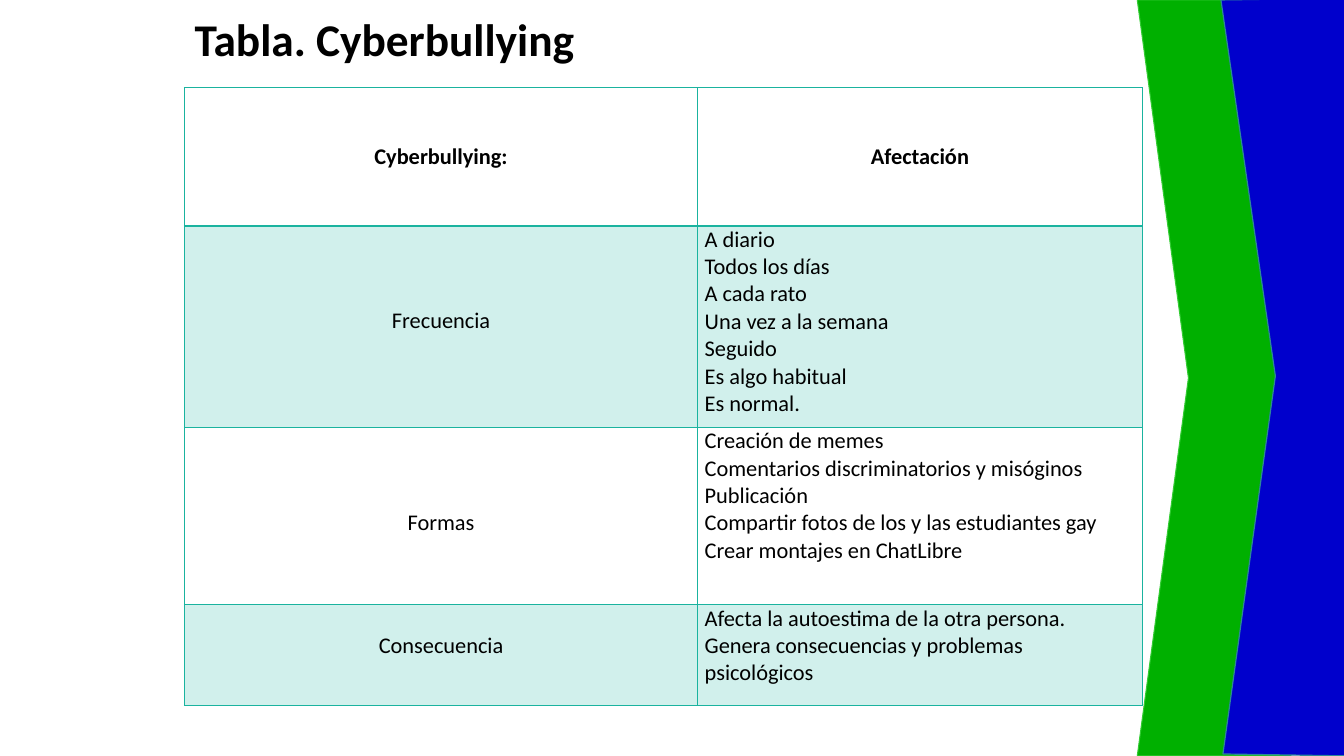
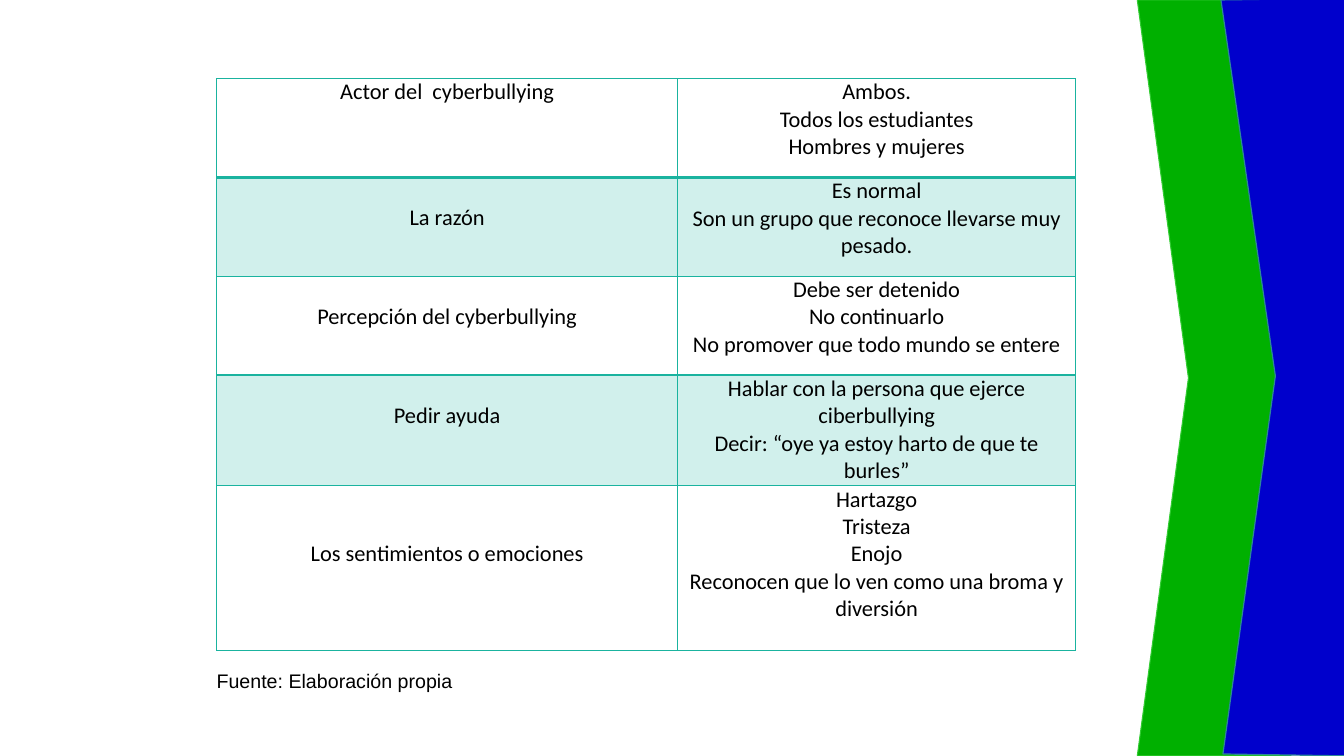
from dataclasses import dataclass

from lxml.etree import SubElement
from pptx import Presentation
from pptx.dml.color import RGBColor
from pptx.enum.shapes import MSO_SHAPE
from pptx.enum.text import MSO_ANCHOR, PP_ALIGN
from pptx.oxml.ns import qn
from pptx.util import Inches, Pt

BLACK = RGBColor(0x00, 0x00, 0x00)
GREEN = RGBColor(0x00, 0xB0, 0x00)
GREEN_EDGE = RGBColor(0x33, 0xCC, 0x33)
BLUE = RGBColor(0x00, 0x00, 0xCC)
BLUE_EDGE = RGBColor(0x2E, 0x87, 0x99)
TEAL = RGBColor(0x1A, 0xB3, 0x9F)
PALE_TEAL = RGBColor(0xD1, 0xF0, 0xEC)

TABLE_SIZE = 16
LINE_HEIGHT = 0.27  # one line of table text, in inches
BLUE_BAND = [(12.11, 0), (13.47, -0.02), (13.4, 3.75),
             (13.44, 7.5), (12.13, 7.48), (12.65, 3.73)]


@dataclass(frozen=True)
class Row:
    height: float
    label: str
    answers: list[str]
    label_drop: int = 0  # lines of space above the label
    header: bool = False


@dataclass(frozen=True)
class TableSpec:
    left: float
    top: float
    widths: tuple[float, float]
    rows: list[Row]
    answer_align: PP_ALIGN


AFFECTATION = TableSpec(1.83, 0.87, (5.09, 4.41), [
    Row(1.37, "Cyberbullying:", ["Afectación"], header=True),
    Row(2, "Frecuencia", [
        "A diario", "Todos los días", "A cada rato", "Una vez a la semana",
        "Seguido", "Es algo habitual", "Es normal."], 3),
    Row(1.76, "Formas", [
        "Creación de memes", "Comentarios discriminatorios y misóginos",
        "Publicación", "Compartir fotos de los y las estudiantes gay",
        "Crear montajes en ChatLibre"], 3),
    Row(1, "Consecuencia", [
        "Afecta la autoestima de la otra persona.",
        "Genera consecuencias y problemas psicológicos"], 1),
], PP_ALIGN.LEFT)

PERCEPTION = TableSpec(2.15, 0.78, (4.57, 3.95), [
    Row(0.98, "Actor del  cyberbullying", [
        "Ambos.", "Todos los estudiantes", "Hombres y mujeres"]),
    Row(0.98, "La razón", [
        "Es normal", "Son un grupo que reconoce llevarse muy pesado."], 1),
    Row(0.98, "Percepción del cyberbullying", [
        "Debe ser detenido", "No continuarlo",
        "No promover que todo mundo se entere"], 1),
    Row(1.1, "Pedir ayuda", [
        "Hablar con la persona que ejerce ciberbullying",
        "Decir: “oye ya estoy harto de que te burles”"], 1),
    Row(1.63, "Los sentimientos o emociones", [
        "Hartazgo", "Tristeza", "Enojo",
        "Reconocen que lo ven como una broma y diversión"], 2),
], PP_ALIGN.CENTER)


def write(tf, lines: list[str], *, size: float = TABLE_SIZE, font: str = "Calibri",
          bold: bool = False, align: PP_ALIGN = PP_ALIGN.LEFT,
          spacing: float = 1.0) -> None:
    """Fill a text frame with one paragraph per line."""
    for i, line in enumerate(lines):
        p = tf.paragraphs[0] if i == 0 else tf.add_paragraph()
        p.alignment, p.line_spacing = align, spacing
        r = p.add_run()
        r.text = line
        r.font.size, r.font.name, r.font.bold = Pt(size), font, bold
        r.font.color.rgb = BLACK


def paint(sp, fill: RGBColor, edge: RGBColor, width: float) -> None:
    sp.shadow.inherit = False
    sp.fill.solid()
    sp.fill.fore_color.rgb = fill
    sp.line.color.rgb = edge
    sp.line.width = Pt(width)


def add_bands(s) -> None:
    chevron = s.shapes.add_shape(MSO_SHAPE.CHEVRON, Inches(11.28), 0,
                                 Inches(2.03), Inches(7.5))
    chevron.adjustments[0] = 0.25
    paint(chevron, GREEN, GREEN_EDGE, 0.75)
    points = [(Inches(x), Inches(y)) for x, y in BLUE_BAND]
    outline = s.shapes.build_freeform(*points[0])
    outline.add_line_segments(points[1:], close=True)
    paint(outline.convert_to_shape(), BLUE, BLUE_EDGE, 0.85)


def set_borders(cell, top: float, bottom: float) -> None:
    """Draw the four cell borders; the side ones are 1 pt wide."""
    tc_pr = cell._tc.get_or_add_tcPr()
    for side, width in (("L", 1), ("R", 1), ("T", top), ("B", bottom)):
        ln = SubElement(tc_pr, qn(f"a:ln{side}"), w=str(Pt(width)))
        fill = SubElement(ln, qn("a:solidFill"))
        SubElement(fill, qn("a:srgbClr"), val=str(TEAL))


def add_table(s, spec: TableSpec) -> None:
    frame = s.shapes.add_table(
        len(spec.rows), len(spec.widths), Inches(spec.left), Inches(spec.top),
        Inches(sum(spec.widths)), Inches(sum(row.height for row in spec.rows)))
    table = frame.table
    table.first_row = table.horz_banding = False
    for column, width in zip(table.columns, spec.widths):
        column.width = Inches(width)
    for i, row in enumerate(spec.rows):
        table.rows[i].height = Inches(row.height)
        answer_align = PP_ALIGN.CENTER if row.header else spec.answer_align
        columns = (([row.label], PP_ALIGN.CENTER, row.label_drop),
                   (row.answers, answer_align, 0))
        for j, (lines, align, drop) in enumerate(columns):
            cell = table.cell(i, j)
            cell.margin_left = cell.margin_right = Inches(0.07)
            cell.margin_top = Inches(drop * LINE_HEIGHT)
            cell.margin_bottom = 0
            cell.vertical_anchor = MSO_ANCHOR.MIDDLE if row.header else MSO_ANCHOR.TOP
            set_borders(cell, top=2 if i == 1 else 1, bottom=2 if i == 0 else 1)
            if i % 2:
                cell.fill.solid()
                cell.fill.fore_color.rgb = PALE_TEAL
            else:
                cell.fill.background()
            write(cell.text_frame, lines, bold=row.header, align=align)


def add_title(s, text: str) -> None:
    title = s.shapes.title
    title.left, title.top = Inches(1.83), Inches(0)
    title.width, title.height = Inches(4.83), Inches(0.83)
    title.text_frame.vertical_anchor = MSO_ANCHOR.MIDDLE
    write(title.text_frame, [text], size=32.4, bold=True, spacing=0.9)


def add_source_note(s, text: str) -> None:
    box = s.shapes.add_textbox(Inches(2.05), Inches(6.47), Inches(3), Inches(0.51))
    box.text_frame.word_wrap = True
    write(box.text_frame, [text], size=14, font="Arial",
          align=PP_ALIGN.JUSTIFY, spacing=1.5)


def main() -> None:
    prs = Presentation()
    prs.slide_width, prs.slide_height = Inches(13.33), Inches(7.5)
    title_only, blank = prs.slide_layouts[5], prs.slide_layouts[6]

    s = prs.slides.add_slide(title_only)
    add_bands(s)
    add_title(s, "Tabla. Cyberbullying")
    add_table(s, AFFECTATION)

    s = prs.slides.add_slide(blank)
    add_bands(s)
    add_source_note(s, "Fuente: Elaboración propia")
    add_table(s, PERCEPTION)

    prs.save("out.pptx")


if __name__ == "__main__":
    main()
